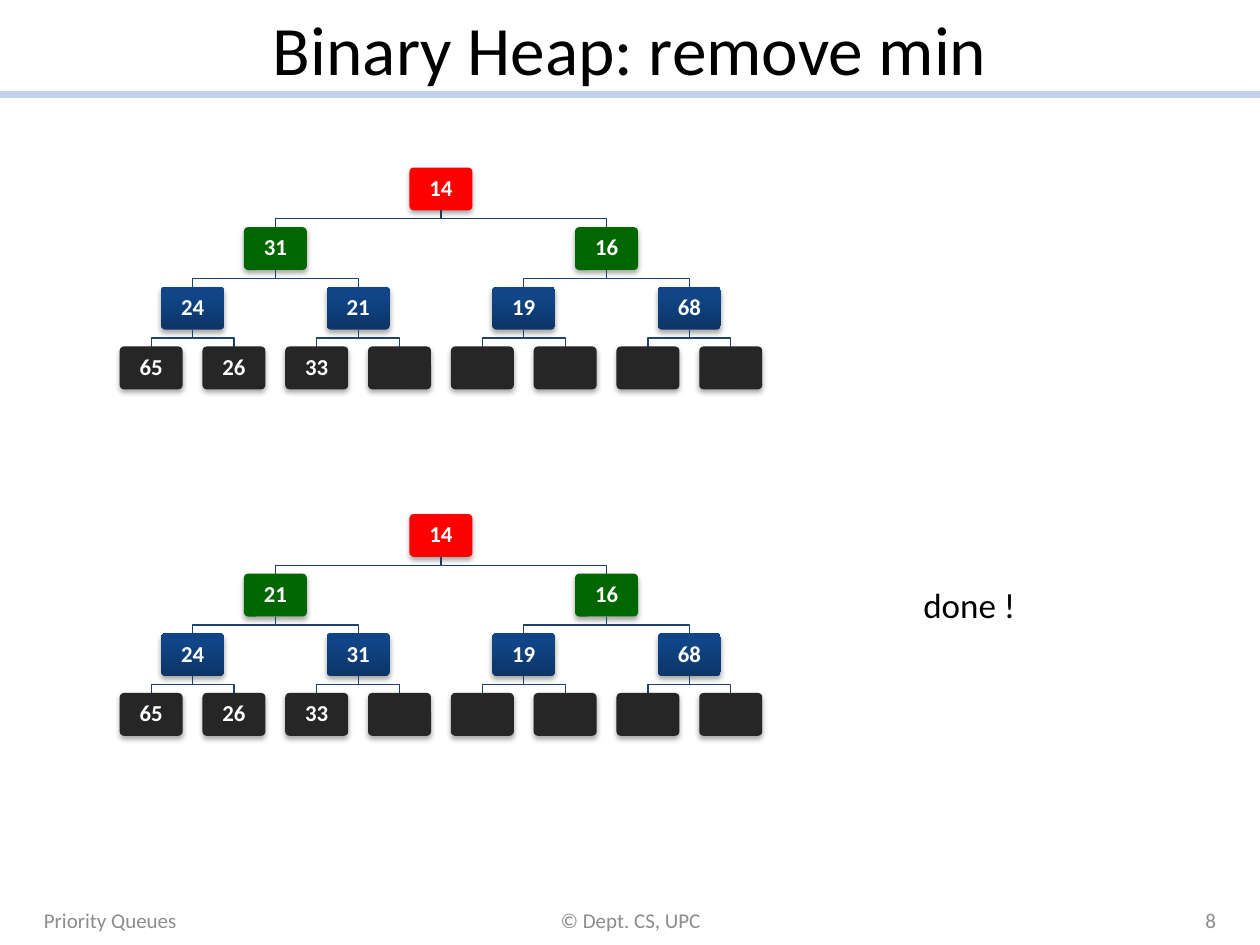
from copy import deepcopy
from dataclasses import dataclass

from lxml import etree
from pptx import Presentation
from pptx import util as u
from pptx.dml.color import RGBColor
from pptx.enum import shapes, text
from pptx.oxml.ns import qn

W, H = 10, 7.5
NODE_W, NODE_H = 0.5, 0.34
LEAF_X = 1.2
COL = 4.6 / 7
ROW = 1.42 / 3
DEPTH = 4
LEVEL_FILLS = ["FF0000", "006600", None, "262626"]
BLUE_STOPS = [(0, "0D3568"), (0.8, "104587"), (1, "0E458A")]
EDGE_COLORS = ["193A64", "1C4271", "1C4271"]


@dataclass
class Label:
    words: str
    left: float
    top: float
    width: float
    height: float
    size: float
    color: str
    align: text.PP_ALIGN
    anchor: text.MSO_ANCHOR = text.MSO_ANCHOR.MIDDLE
    wrap: bool = True


@dataclass
class Heap:
    top: float
    keys: list[int]


GRAY = "8C8C8C"
LEFT, CENTER, RIGHT = text.PP_ALIGN.LEFT, text.PP_ALIGN.CENTER, text.PP_ALIGN.RIGHT
LABELS = [
    Label("Binary Heap: remove min", 0.05 * W, 0, 0.9 * W, 0.1 * H, 39.6, "000000", CENTER),
    Label("Priority Queues", 0.25, 7.1, 2.33, 0.4, 12, GRAY, LEFT),
    Label("© Dept. CS, UPC", 3.42, 7.1, 3.17, 0.4, 12, GRAY, CENTER),
    Label("8", 7.42, 7.1, 2.33, 0.4, 12, GRAY, RIGHT),
    Label("done !", 7.23, 4.58, 0.94, 0.44, 20, "000000", LEFT, text.MSO_ANCHOR.TOP, False),
]
HEAPS = [
    Heap(1.33, [14, 31, 16, 24, 21, 19, 68, 65, 26, 33]),
    Heap(4.08, [14, 21, 16, 24, 31, 19, 68, 65, 26, 33]),
]


def rgb(value: str) -> RGBColor:
    return RGBColor.from_string(value)


def add_label(s, label: Label) -> None:
    box = s.shapes.add_textbox(*map(u.Inches, (label.left, label.top, label.width, label.height)))
    tf = box.text_frame
    tf.word_wrap = label.wrap
    tf.vertical_anchor = label.anchor
    p = tf.paragraphs[0]
    p.text = label.words
    p.alignment = label.align
    p.font.name = "Calibri"
    p.font.size = u.Pt(label.size)
    p.font.color.rgb = rgb(label.color)


def add_rule(s) -> None:
    y = u.Inches(0.1 * H)
    rule = s.shapes.add_connector(shapes.MSO_CONNECTOR.STRAIGHT, 0, y, u.Inches(W), y)
    rule.line.color.rgb = rgb("C2D1ED")
    rule.line.width = u.Pt(4)
    etree.SubElement(rule._element.spPr, qn("a:effectLst"))


def fill_gradient(sp) -> None:
    sp.fill.gradient()
    sp.fill.gradient_angle = 90
    stops = sp._element.spPr.find(".//" + qn("a:gsLst"))
    stops.append(deepcopy(stops[-1]))
    for stop, (position, color) in zip(sp.fill.gradient_stops, BLUE_STOPS):
        stop.position = position
        stop.color.rgb = rgb(color)


def add_shadow(sp) -> None:
    sp.shadow.inherit = False
    effects = sp._element.spPr.find(qn("a:effectLst"))
    shadow = etree.SubElement(effects, qn("a:outerShdw"), blurRad=str(u.Pt(3.1)),
                              dist=str(u.Pt(1.8)), dir="5400000", rotWithShape="0")
    color = etree.SubElement(shadow, qn("a:srgbClr"), val="000000")
    etree.SubElement(color, qn("a:alpha"), val="35000")


def node_center(level: int, index: int) -> float:
    span = 2 ** (DEPTH - 1 - level)
    return LEAF_X + COL * ((index + 0.5) * span - 0.5)


def add_edge(group, level: int, index: int, top: float) -> None:
    parent_x, child_x = node_center(level - 1, index // 2), node_center(level, index)
    start = top - ROW + NODE_H
    middle = (start + top) / 2
    builder = group.shapes.build_freeform(u.Inches(parent_x), u.Inches(start))
    bends = [(parent_x, middle), (child_x, middle), (child_x, top)]
    builder.add_line_segments([(u.Inches(x), u.Inches(y)) for x, y in bends], close=False)
    edge = builder.convert_to_shape()
    edge.shadow.inherit = False
    edge.fill.background()
    edge.line.color.rgb = rgb(EDGE_COLORS[level - 1])
    edge.line.width = u.Pt(0.75)


def add_node(group, level: int, index: int, top: float, key: str) -> None:
    left = node_center(level, index) - NODE_W / 2
    sp = group.shapes.add_shape(shapes.MSO_SHAPE.ROUNDED_RECTANGLE,
                                *map(u.Inches, (left, top, NODE_W, NODE_H)))
    sp.adjustments[0] = 0.1
    sp.line.fill.background()
    if LEVEL_FILLS[level]:
        sp.fill.solid()
        sp.fill.fore_color.rgb = rgb(LEVEL_FILLS[level])
    else:
        fill_gradient(sp)
    add_shadow(sp)
    tf = sp.text_frame
    tf.margin_left = tf.margin_right = tf.margin_top = tf.margin_bottom = u.Inches(0.05)
    tf.vertical_anchor = text.MSO_ANCHOR.MIDDLE
    p = tf.paragraphs[0]
    p.text = key
    p.alignment = CENTER
    p.line_spacing = 0.9
    p.font.name = "Calibri"
    p.font.size = u.Pt(13)
    p.font.bold = True
    p.font.color.rgb = rgb("FFFFFF")


def add_heap(s, heap: Heap) -> None:
    group = s.shapes.add_group_shape()
    keys = iter(heap.keys)
    for level in range(DEPTH):
        top = heap.top + level * ROW
        for index in range(2 ** level):
            if level:
                add_edge(group, level, index, top)
            add_node(group, level, index, top, str(next(keys, "")))


def main() -> None:
    prs = Presentation()
    prs.slide_width, prs.slide_height = u.Inches(W), u.Inches(H)
    s = prs.slides.add_slide(prs.slide_layouts[6])
    add_rule(s)
    for label in LABELS:
        add_label(s, label)
    for heap in HEAPS:
        add_heap(s, heap)
    prs.save("out.pptx")


if __name__ == "__main__":
    main()
